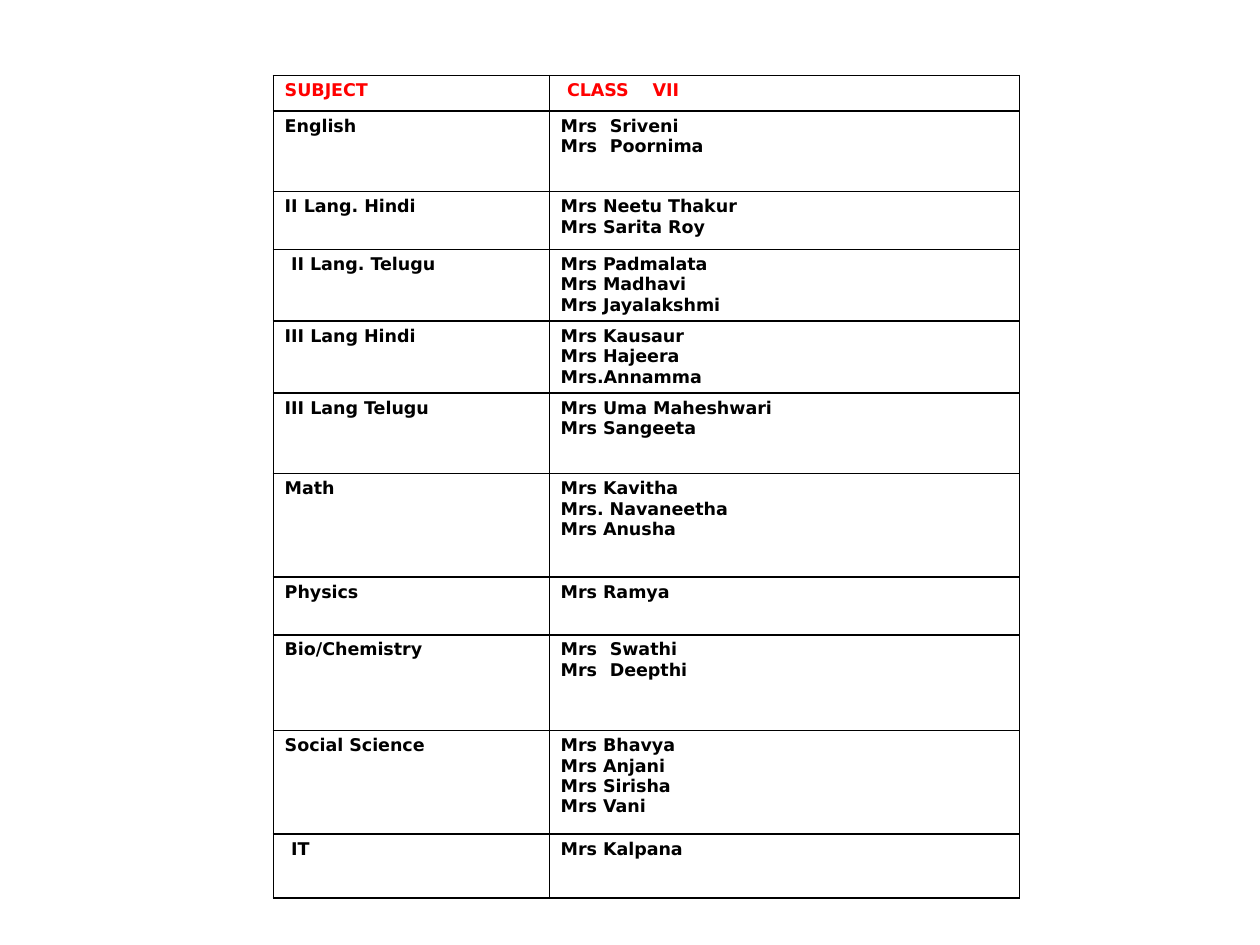
from lxml import etree
from pptx import Presentation
from pptx.dml import color
from pptx.oxml import ns
from pptx.util import Inches, Pt

INK = "000000"
HEADING = "FF0000"
INDENT = Inches(0.05)
STAFF = [
    (0.28, "SUBJECT", ["CLASS\tVII"]),
    (0.64, "English", ["Mrs\tSriveni", "Mrs\tPoornima"]),
    (0.46, "II Lang. Hindi", ["Mrs Neetu Thakur", "Mrs Sarita Roy"]),
    (0.57, "II Lang. Telugu", ["Mrs Padmalata", "Mrs Madhavi", "Mrs Jayalakshmi"]),
    (0.57, "III Lang Hindi", ["Mrs Kausaur", "Mrs Hajeera", "Mrs.Annamma"]),
    (0.64, "III Lang Telugu", ["Mrs Uma Maheshwari", "Mrs Sangeeta"]),
    (0.82, "Math", ["Mrs Kavitha", "Mrs. Navaneetha", "Mrs Anusha"]),
    (0.46, "Physics", ["Mrs Ramya"]),
    (0.76, "Bio/Chemistry", ["Mrs\tSwathi", "Mrs\tDeepthi"]),
    (0.82, "Social Science", ["Mrs Bhavya", "Mrs Anjani", "Mrs Sirisha", "Mrs Vani"]),
    (0.51, "IT", ["Mrs Kalpana"]),
]
INDENTED = {"CLASS\tVII", "II Lang. Telugu", "IT"}
COLUMN_SHARES = (0.37, 0.63)


def rgb(hex_string):
    return color.RGBColor.from_string(hex_string)


def add_element(parent, tag, **attributes):
    element = etree.SubElement(parent, ns.qn(tag))
    for key, setting in attributes.items():
        element.set(key, str(setting))
    return element


def rule_borders(cell):
    properties = cell._tc.get_or_add_tcPr()
    for side in ("a:lnL", "a:lnR", "a:lnT", "a:lnB"):
        border = add_element(properties, side, w=Pt(1))
        add_element(add_element(border, "a:solidFill"), "a:srgbClr", val=INK)


def write_line(paragraph, line, hex_string):
    properties = paragraph._p.get_or_add_pPr()
    if line in INDENTED:
        properties.set("marL", str(INDENT))
    if "\t" in line:
        stop = Inches(0.68 if line.startswith("CLASS") else 0.39)
        add_element(add_element(properties, "a:tabLst"), "a:tab", pos=stop, algn="l")
    run = paragraph.add_run()
    run.text = line
    for key, setting in {"name": "DejaVu Sans", "size": Pt(10), "bold": True}.items():
        setattr(run.font, key, setting)
    run.font.color.rgb = rgb(hex_string)


def fill_cell(cell, lines, hex_string):
    margins = {"margin_left": 0.09, "margin_right": 0.09,
               "margin_top": 0.04, "margin_bottom": 0.04}
    for key, length in margins.items():
        setattr(cell, key, Inches(length))
    rule_borders(cell)
    cell.fill.background()
    frame = cell.text_frame
    for index, line in enumerate(lines):
        paragraph = frame.add_paragraph() if index else frame.paragraphs[0]
        write_line(paragraph, line, hex_string)


def add_staff_table(slide, left, top, width, height):
    table = slide.shapes.add_table(
        len(STAFF), len(COLUMN_SHARES), left, top, width, height).table
    for flag in ("first_row", "horz_banding"):
        setattr(table, flag, False)
    for column, share in zip(table.columns, COLUMN_SHARES):
        column.width = int(width * share)
    for index, (row_height, subject, teachers) in enumerate(STAFF):
        table.rows[index].height = Inches(row_height)
        hex_string = INK if index else HEADING
        for cell, lines in zip(table.rows[index].cells, ([subject], teachers)):
            fill_cell(cell, lines, hex_string)


def main():
    deck = Presentation()
    deck.slide_width, deck.slide_height = Inches(10), Inches(7.5)
    slide = deck.slides.add_slide(deck.slide_layouts[6])
    total = sum(row_height for row_height, _, _ in STAFF)
    add_staff_table(slide, Inches(2.17), Inches(0.6), Inches(5.92), Inches(total))
    deck.save("out.pptx")


if __name__ == "__main__":
    main()
